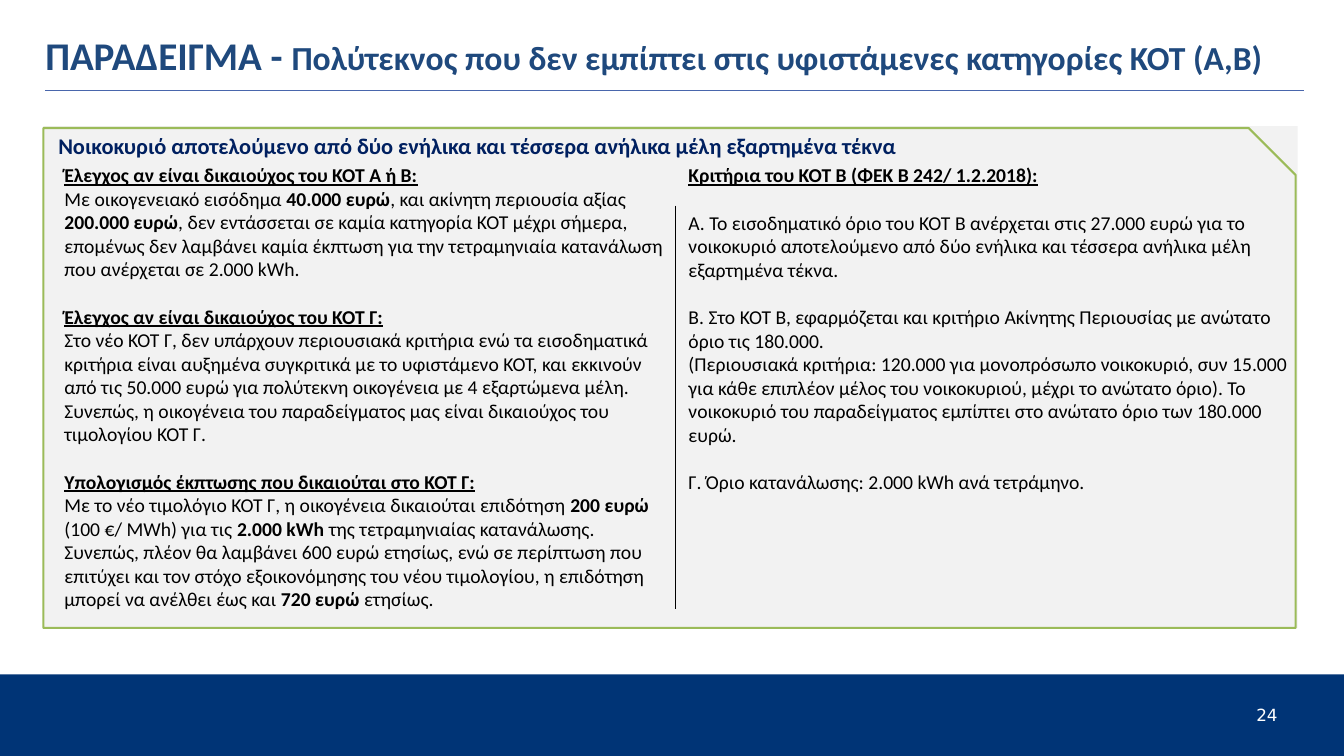
import pptx
import pptx.util
import pptx.dml.color
import pptx.enum.shapes
import pptx.enum.text
from lxml import etree
from pptx.util import Inches

SHAPE = pptx.enum.shapes.MSO_SHAPE
ANCHOR = pptx.enum.text.MSO_ANCHOR
A_NS = "http://schemas.openxmlformats.org/drawingml/2006/main"


class Theme:
    font, number_font = "Calibri", "DejaVu Sans"
    band, panel, frame, rule = "003476", "F2F2F2", "9BBB59", "4966AC"
    title, subtitle, text, white = "1F497D", "002060", "000000", "FFFFFF"
    title_size, title_small, subtitle_size, body_size, number_size = 28, 24, 16, 14, 12
    section_gap = 17


# Paragraphs: each is (space before, runs); each run is (text, format overrides)
def heading(text, gap=0):
    return gap, [(text, dict(bold=True, underline=True))]


def body(text, gap=0):
    """Words between asterisks are bold."""
    return gap, [(part, dict(bold=i % 2 == 1)) for i, part in enumerate(text.split("*"))]


LEFT_COLUMN = [
    heading("Έλεγχος αν είναι δικαιούχος του ΚΟΤ Α ή Β:"),
    body("Με οικογενειακό εισόδημα *40.000 ευρώ*, και ακίνητη περιουσία αξίας *200.000 ευρώ*, "
         "δεν εντάσσεται σε καμία κατηγορία ΚΟΤ μέχρι σήμερα, επομένως δεν λαμβάνει καμία "
         "έκπτωση για την τετραμηνιαία κατανάλωση που ανέρχεται σε 2.000 kWh."),
    heading("Έλεγχος αν είναι δικαιούχος του ΚΟΤ Γ:", Theme.section_gap),
    body("Στο νέο ΚΟΤ Γ, δεν υπάρχουν περιουσιακά κριτήρια ενώ τα εισοδηματικά κριτήρια είναι "
         "αυξημένα συγκριτικά με το υφιστάμενο ΚΟΤ, και εκκινούν από τις 50.000 ευρώ για "
         "πολύτεκνη οικογένεια με 4 εξαρτώμενα μέλη. Συνεπώς, η οικογένεια του παραδείγματος "
         "μας είναι δικαιούχος του τιμολογίου ΚΟΤ Γ."),
    heading("Υπολογισμός έκπτωσης που δικαιούται στο ΚΟΤ Γ:", Theme.section_gap),
    body("Με το νέο τιμολόγιο ΚΟΤ Γ, η οικογένεια δικαιούται επιδότηση *200 ευρώ* (100 €/ MWh) "
         "για τις *2.000 kWh *της τετραμηνιαίας κατανάλωσης. Συνεπώς, πλέον θα λαμβάνει 600 ευρώ "
         "ετησίως, ενώ σε περίπτωση που επιτύχει και τον στόχο εξοικονόμησης του νέου τιμολογίου, "
         "η επιδότηση μπορεί να ανέλθει έως και *720 ευρώ* ετησίως."),
]
RIGHT_COLUMN = [
    heading("Κριτήρια του ΚΟΤ Β (ΦΕΚ Β 242/ 1.2.2018):"),
    body("Α. Το εισοδηματικό όριο του ΚΟΤ Β ανέρχεται στις 27.000 ευρώ για το νοικοκυριό "
         "αποτελούμενο από δύο ενήλικα και τέσσερα ανήλικα μέλη εξαρτημένα τέκνα.",
         Theme.section_gap),
    body("Β. Στο ΚΟΤ Β, εφαρμόζεται και κριτήριο Ακίνητης Περιουσίας με ανώτατο όριο τις 180.000.",
         Theme.section_gap),
    body("(Περιουσιακά κριτήρια: 120.000 για μονοπρόσωπο νοικοκυριό, συν 15.000 για κάθε "
         "επιπλέον μέλος του νοικοκυριού, μέχρι το ανώτατο όριο). Το νοικοκυριό του "
         "παραδείγματος εμπίπτει στο ανώτατο όριο των 180.000 ευρώ."),
    body("Γ. Όριο κατανάλωσης: 2.000 kWh ανά τετράμηνο.", Theme.section_gap),
]


def rgb(color):
    return pptx.dml.color.RGBColor.from_string(color)


def add_box(s, kind, x, y, w, h, fill=None, line=None, width=1.5):
    sp = s.shapes.add_shape(kind, Inches(x), Inches(y), Inches(w), Inches(h))
    sp.shadow.inherit = False
    if fill:
        sp.fill.solid()
        sp.fill.fore_color.rgb = rgb(fill)
    else:
        sp.fill.background()
    if line:
        sp.line.color.rgb = rgb(line)
        sp.line.width = pptx.util.Pt(width)
    else:
        sp.line.fill.background()
    return sp


def add_line(s, x1, y1, x2, y2, color, width):
    line = s.shapes.add_connector(pptx.enum.shapes.MSO_CONNECTOR.STRAIGHT,
                                  Inches(x1), Inches(y1), Inches(x2), Inches(y2))
    line.line.color.rgb = rgb(color)
    line.line.width = pptx.util.Pt(width)
    etree.SubElement(line._element.spPr, f"{{{A_NS}}}effectLst")


def add_run(p, text, size, color, font=Theme.font, bold=False, underline=False):
    r = p.add_run()
    r.text = text
    r.font.name, r.font.size = font, pptx.util.Pt(size)
    r.font.bold, r.font.underline = bold, underline
    r.font.color.rgb = rgb(color)


def add_text(s, paragraphs, x, y, w, h, inset=True, anchor=ANCHOR.TOP, line_spacing=None, **style):
    tf = s.shapes.add_textbox(Inches(x), Inches(y), Inches(w), Inches(h)).text_frame
    tf.word_wrap = True
    tf.vertical_anchor = anchor
    if not inset:
        tf.margin_left = tf.margin_top = tf.margin_right = tf.margin_bottom = 0
    for i, (gap, runs) in enumerate(paragraphs):
        p = tf.add_paragraph() if i else tf.paragraphs[0]
        if gap:
            p.space_before = pptx.util.Pt(gap)
        if line_spacing:
            p.line_spacing = line_spacing
        for text, overrides in runs:
            add_run(p, text, **{**style, **overrides})


def main():
    prs = pptx.Presentation()
    prs.slide_width, prs.slide_height = Inches(13.33), Inches(7.5)
    s = prs.slides.add_slide(prs.slide_layouts[6])

    # Footer band and title rule
    add_box(s, SHAPE.RECTANGLE, 0, 6.69, 13.33, 0.81, fill=Theme.band)
    add_line(s, 0.45, 0.9, 12.93, 0.9, Theme.rule, 0.96)

    # Title
    add_text(s, [(0, [("ΠΑΡΑΔΕΙΓΜΑ - ", {}),
                      ("Πολύτεκνος που δεν εμπίπτει στις υφιστάμενες κατηγορίες ΚΟΤ (Α,Β)",
                       dict(size=Theme.title_small))])],
             0.45, 0.25, 12.44, 0.58, inset=False, anchor=ANCHOR.MIDDLE,
             size=Theme.title_size, color=Theme.title, bold=True)

    # Panel with its snipped frame
    add_box(s, SHAPE.RECTANGLE, 0.43, 1.25, 12.44, 4.98, fill=Theme.panel)
    frame = add_box(s, SHAPE.SNIP_ROUND_RECTANGLE, 0.43, 1.27, 12.42, 4.96, line=Theme.frame)
    frame.adjustments[0], frame.adjustments[1] = 0, 0.094

    # Household description and the two columns
    add_text(s, [(0, [("Νοικοκυριό αποτελούμενο από δύο ενήλικα και τέσσερα ανήλικα μέλη "
                       "εξαρτημένα τέκνα", {})])],
             0.48, 1.26, 8.85, 0.64, size=Theme.subtitle_size, color=Theme.subtitle, bold=True)
    for x, h, column in ((0.54, 4.58, LEFT_COLUMN), (6.73, 3.64, RIGHT_COLUMN)):
        add_text(s, column, x, 1.57, 6.19, h, size=Theme.body_size, color=Theme.text)
    add_line(s, 6.7, 2.04, 6.7, 6.04, Theme.text, 1)

    # Page number
    add_text(s, [(0, [("24", {})])], 12.46, 7.02, 0.42, 0.14, inset=False, line_spacing=0.87,
             size=Theme.number_size, color=Theme.white, font=Theme.number_font)

    prs.save("out.pptx")


if __name__ == "__main__":
    main()
